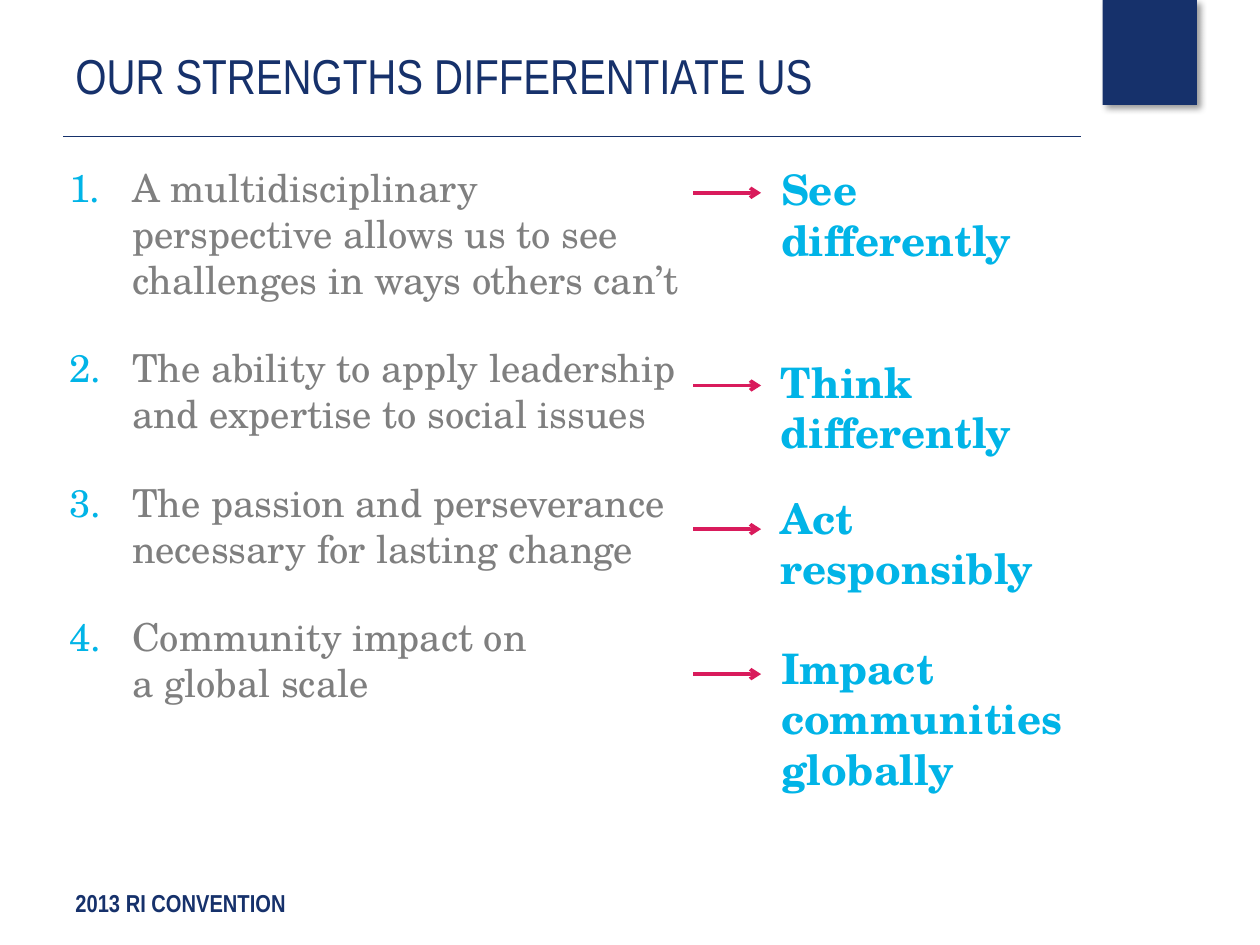
from lxml.etree import SubElement
from pptx import Presentation
from pptx.dml.color import RGBColor as RGB
from pptx.enum.shapes import MSO_CONNECTOR as Connector, MSO_SHAPE as Shape
from pptx.enum.text import MSO_ANCHOR as Anchor
from pptx.oxml.ns import qn
from pptx.util import Pt

# Content
TITLE = "OUR STRENGTHS DIFFERENTIATE US"
FOOTER = "2013 RI CONVENTION"
STRENGTHS = [
    ("A multidisciplinary perspective allows us to see challenges in ways others can’t", "808080"),
    ("The ability to apply leadership and expertise to social issues", "7F7F7F"),
    ("The passion and perseverance necessary for lasting change", "7F7F7F"),
    ("Community impact on \va global scale", "7F7F7F"),
]
# Outcome, top, width, height, arrow height
OUTCOMES = [
    ("See \vdifferently", 90, 219.6, 65.5, 110.2),
    ("Think \vdifferently", 200.2, 235.4, 65.5, 220.3),
    ("Act \vresponsibly", 277.9, 237.6, 65.5, 302.4),
    ("Impact communities globally", 363.6, 219.6, 94.3, 385.2),
]

THEME = {
    "navy": "16316B", "cyan": "01B4E7", "magenta": "D91B5C",
    "title": {"name": "Arial Narrow", "size": Pt(28)},
    "footer": {"name": "Arial Narrow", "size": Pt(14), "bold": True},
    "strength": {"name": "TeX Gyre Schola", "size": Pt(22)},
    "outcome": {"name": "TeX Gyre Schola", "size": Pt(24), "bold": True},
}
MARGIN, RULE_END, RULE_Y = 36, 617.8, 78
ARROW_START, ARROW_END, OUTCOME_LEFT = 396, 434.9, 439.2
INDENT, STRENGTH_GAP = 36, 24

deck = Presentation()
deck.slide_width, deck.slide_height = Pt(720), Pt(540)
slide = deck.slides.add_slide(deck.slide_layouts[6])


def add_node(parent, tag, **values):
    return SubElement(parent, qn(tag), values)


def add_frame(left, top, width, height):
    frame = slide.shapes.add_textbox(Pt(left), Pt(top), Pt(width), Pt(height)).text_frame
    frame.word_wrap = True
    return frame


def write(paragraph, text, style, color):
    paragraph.text = text
    for run in paragraph.runs:
        for key, value in THEME[style].items():
            setattr(run.font, key, value)
        run.font.color.rgb = RGB.from_string(color)


def add_line(start, end, y, color, weight):
    line = slide.shapes.add_connector(Connector.STRAIGHT, Pt(start), Pt(y), Pt(end), Pt(y))
    line.line.color.rgb = RGB.from_string(color)
    line.line.width = Pt(weight)
    add_node(line._element.spPr, "a:effectLst")
    return line


def number(paragraph):
    props = paragraph._p.get_or_add_pPr()
    props.set("marL", str(Pt(INDENT)))
    props.set("indent", str(-Pt(INDENT)))
    add_node(add_node(props, "a:buClr"), "a:srgbClr", val=THEME["cyan"])
    add_node(props, "a:buAutoNum", type="arabicPeriod")


# Corner block with a soft shadow
block = slide.shapes.add_shape(Shape.RECTANGLE, Pt(630), Pt(0), Pt(54), Pt(60))
block.fill.solid()
block.fill.fore_color.rgb = RGB.from_string(THEME["navy"])
block.line.fill.background()
block.shadow.inherit = False
effects = block._element.spPr.find(qn("a:effectLst"))
shadow = add_node(effects, "a:outerShdw", blurRad=str(Pt(4)), dist=str(Pt(3)),
                  dir="2700000", algn="tl", rotWithShape="0")
add_node(add_node(shadow, "a:srgbClr", val="000000"), "a:alpha", val="40000")

# Footer, rule and title
write(add_frame(MARGIN, 504, 264, 24.5).paragraphs[0], FOOTER, "footer", THEME["navy"])
add_line(MARGIN, RULE_END, RULE_Y, THEME["navy"], 0.5)
heading = add_frame(MARGIN, 21.6, RULE_END - MARGIN, 38.2)
heading.vertical_anchor = Anchor.BOTTOM
heading.margin_top = heading.margin_bottom = 0
write(heading.paragraphs[0], TITLE, "title", THEME["navy"])

# Numbered strengths
strengths = add_frame(32.4, 90, 363.6, 379.4)
for index, (text, color) in enumerate(STRENGTHS):
    paragraph = strengths.add_paragraph() if index else strengths.paragraphs[0]
    if index:
        paragraph.space_before = Pt(STRENGTH_GAP)
    number(paragraph)
    write(paragraph, text, "strength", color)

# Outcomes, each led by an arrow
for text, top, width, height, arrow_y in OUTCOMES:
    outcome = add_frame(OUTCOME_LEFT, top, width, height)
    write(outcome.paragraphs[0], text, "outcome", THEME["cyan"])
    arrow = add_line(ARROW_START, ARROW_END, arrow_y, THEME["magenta"], 2)
    add_node(arrow.line._get_or_add_ln(), "a:tailEnd", type="arrow")

deck.save("out.pptx")
